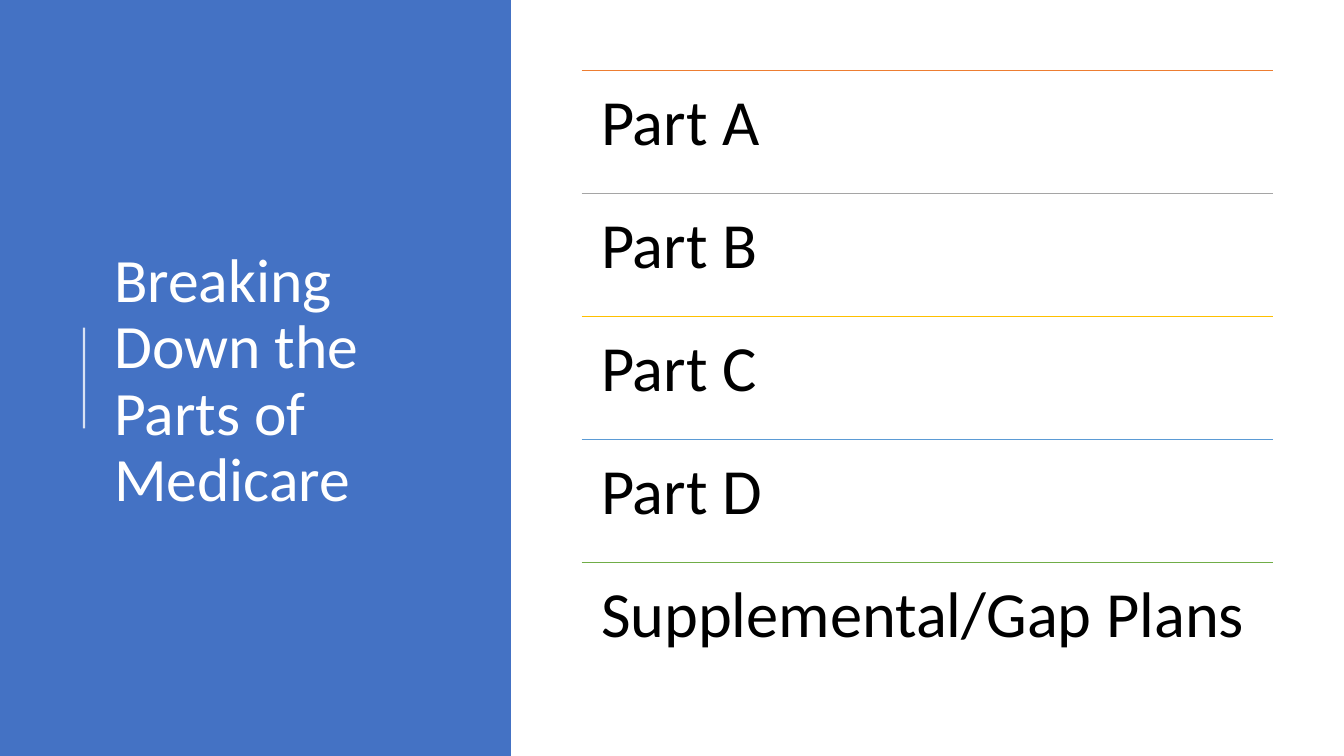
from pptx import Presentation
from pptx.dml.color import RGBColor
from pptx.enum import shapes, text
from pptx.oxml.ns import qn
from pptx.util import Pt
from lxml import etree

PARTS = [
    ("Part A", "ED7D31"),
    ("Part B", "A5A5A5"),
    ("Part C", "FFC000"),
    ("Part D", "5B9BD5"),
    ("Supplemental/Gap Plans", "70AD47"),
]
LIST_LEFT, LIST_TOP, LIST_WIDTH, ROW_HEIGHT = 415.5, 50.5, 494, 87.8


def color(value):
    """Turn a hex string into a colour."""
    return RGBColor.from_string(value)


def add_panel(slide, left, top, width, height, fill):
    """Draw a plain filled rectangle."""
    panel = slide.shapes.add_shape(
        shapes.MSO_SHAPE.RECTANGLE, Pt(left), Pt(top), Pt(width), Pt(height))
    panel.shadow.inherit = False
    panel.fill.solid()
    panel.fill.fore_color.rgb = color(fill)
    panel.line.fill.background()


def add_rule(slide, start, end, stroke, weight=1, opacity=100):
    """Draw a straight line, optionally see-through."""
    rule = slide.shapes.add_connector(
        shapes.MSO_CONNECTOR.STRAIGHT, *(Pt(n) for n in (*start, *end)))
    rule.line.color.rgb = color(stroke)
    rule.line.width = Pt(weight)
    properties = rule._element.spPr
    etree.SubElement(properties, qn("a:effectLst"))
    if opacity < 100:
        tint = properties.find(".//" + qn("a:srgbClr"))
        etree.SubElement(tint, qn("a:alpha"), val=str(opacity * 1000))


def add_text(slide, words, left, top, width, height, *, size, ink,
             anchor=text.MSO_ANCHOR.TOP, inset=(7.2, 3.6)):
    """Place one wrapped paragraph of text."""
    frame = slide.shapes.add_textbox(
        Pt(left), Pt(top), Pt(width), Pt(height)).text_frame
    frame.word_wrap = True
    frame.vertical_anchor = anchor
    frame.margin_left = frame.margin_right = Pt(inset[0])
    frame.margin_top = frame.margin_bottom = Pt(inset[1])
    paragraph = frame.paragraphs[0]
    paragraph.line_spacing = 0.9
    run = paragraph.add_run()
    run.text = words
    run.font.name = "Calibri"
    run.font.size = Pt(size)
    run.font.color.rgb = color(ink)


def add_part(slide, row, name, accent):
    """Add one part of the list below its coloured rule."""
    top = LIST_TOP + row * ROW_HEIGHT
    add_rule(slide, (LIST_LEFT, top), (LIST_LEFT + LIST_WIDTH, top), accent)
    add_text(slide, name, LIST_LEFT, top, LIST_WIDTH, ROW_HEIGHT,
             size=46, ink="000000", inset=(13.8, 13.8))


def main():
    """Build and save the slide."""
    deck = Presentation()
    deck.slide_width, deck.slide_height = Pt(960), Pt(540)
    slide = deck.slides.add_slide(deck.slide_layouts[6])
    add_panel(slide, 0, 0, 365, 540, "4472C4")
    add_text(slide, "Breaking Down the Parts of Medicare", 74.5, 56, 266, 433.5,
             size=44, ink="FFFFFF", anchor=text.MSO_ANCHOR.MIDDLE)
    add_rule(slide, (60, 306), (60, 234), "FFFFFF", weight=1.5, opacity=80)
    for row, (name, accent) in enumerate(PARTS):
        add_part(slide, row, name, accent)
    deck.save("out.pptx")


if __name__ == "__main__":
    main()
